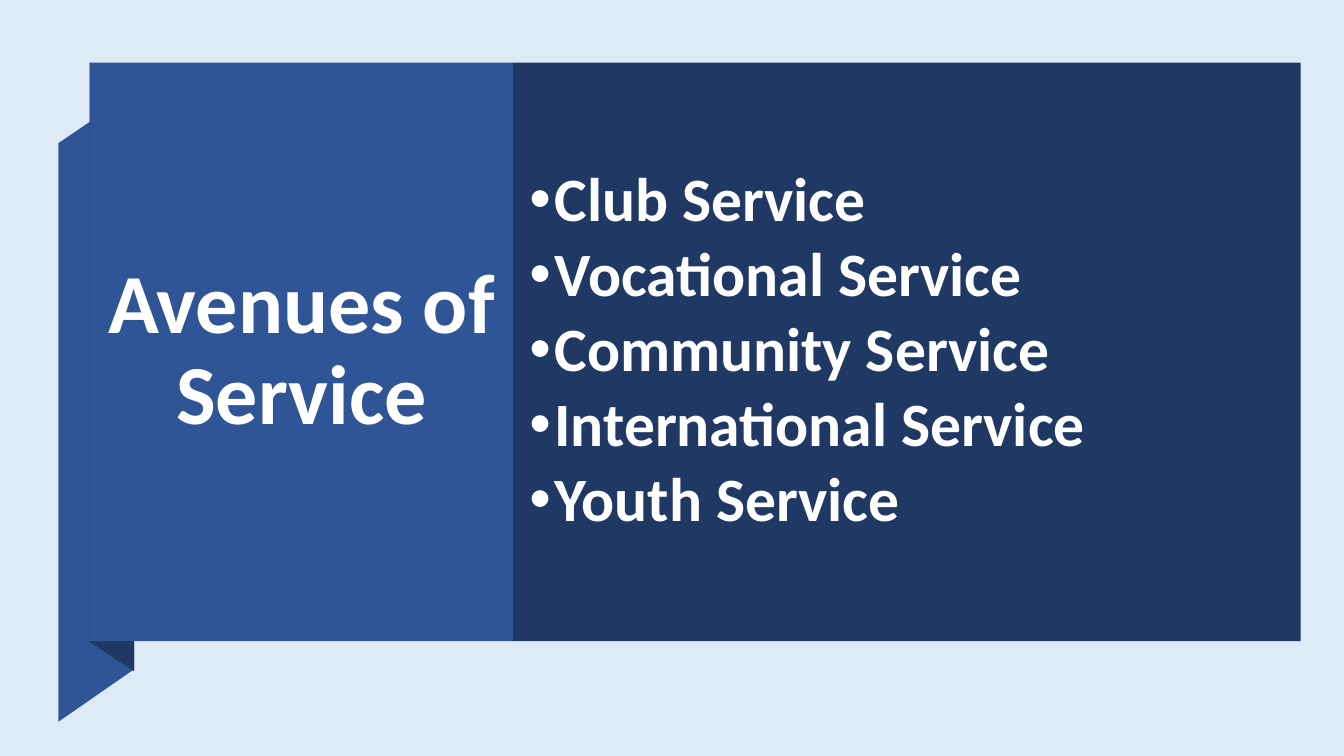
import pptx
import pptx.dml.color
import pptx.enum.text
import pptx.util
from pptx.oxml.ns import qn

PX = 9144  # EMU per px, 100 px to the inch
PALE, BLUE, NAVY, WHITE = "DEEBF7", "2F5597", "203864", "FFFFFF"
FONT = "Calibri"
TOP, HEIGHT = 62, 574

AVENUES = [
    "Club Service",
    "Vocational Service",
    "Community Service",
    "International Service",
    "Youth Service",
]


def set_fill(fill, color):
    fill.solid()
    fill.fore_color.rgb = pptx.dml.color.RGBColor.from_string(color)


def add_fold(slide, points, color):
    """Draw one face of the folded ribbon."""
    builder = slide.shapes.build_freeform(*points[0], scale=PX)
    builder.add_line_segments(points[1:], close=True)
    sp = builder.convert_to_shape()
    sp.shadow.inherit = False
    set_fill(sp.fill, color)
    sp.line.fill.background()


def place_panel(sp, left, width, color):
    """Move a placeholder in front of the ribbon and prepare its text frame."""
    sp.element.getparent().append(sp.element)
    sp.left, sp.top = left * PX, TOP * PX
    sp.width, sp.height = width * PX, HEIGHT * PX
    set_fill(sp.fill, color)
    tf = sp.text_frame
    tf.word_wrap = True
    tf.auto_size = pptx.enum.text.MSO_AUTO_SIZE.NONE
    tf.vertical_anchor = pptx.enum.text.MSO_ANCHOR.MIDDLE
    return tf


def format_paragraph(p, size, align, after=0):
    p.alignment = align
    p.line_spacing = 0.9
    p.space_before = pptx.util.Pt(0)
    p.space_after = pptx.util.Pt(after)
    p.font.name = FONT
    p.font.size = pptx.util.Pt(size)
    p.font.bold = True
    p.font.color.rgb = pptx.dml.color.RGBColor.from_string(WHITE)


def add_bullet(p, margin, indent):
    pPr = p._p.get_or_add_pPr()
    pPr.set("marL", str(margin * PX))
    pPr.set("indent", str(indent * PX))
    bullet_font = pPr.makeelement(qn("a:buFont"), {"typeface": "Arial"})
    bullet = pPr.makeelement(qn("a:buChar"), {"char": "•"})
    pPr.extend([bullet_font, bullet])


def fill_title(tf, text):
    tf.text = text
    format_paragraph(tf.paragraphs[0], 60, pptx.enum.text.PP_ALIGN.CENTER)


def fill_list(tf, items):
    tf.text = "\n".join(items)
    for p in tf.paragraphs:
        add_bullet(p, 31, -25)
        format_paragraph(p, 44, pptx.enum.text.PP_ALIGN.LEFT, after=6)


def main():
    prs = pptx.Presentation()
    prs.slide_width, prs.slide_height = 1333 * PX, 750 * PX
    slide = prs.slides.add_slide(prs.slide_layouts[1])
    set_fill(slide.background.fill, PALE)

    # Folded ribbon behind the panels
    add_fold(slide, [(58, 716), (133, 664), (133, 91), (58, 142)], BLUE)
    add_fold(slide, [(89, 637), (133, 666), (133, 90), (89, 62)], NAVY)

    # Title panel and list panel
    fill_title(place_panel(slide.shapes.title, 89, 420, BLUE), "Avenues of Service")
    fill_list(place_panel(slide.placeholders[1], 509, 781, NAVY), AVENUES)

    prs.save("out.pptx")


if __name__ == "__main__":
    main()
